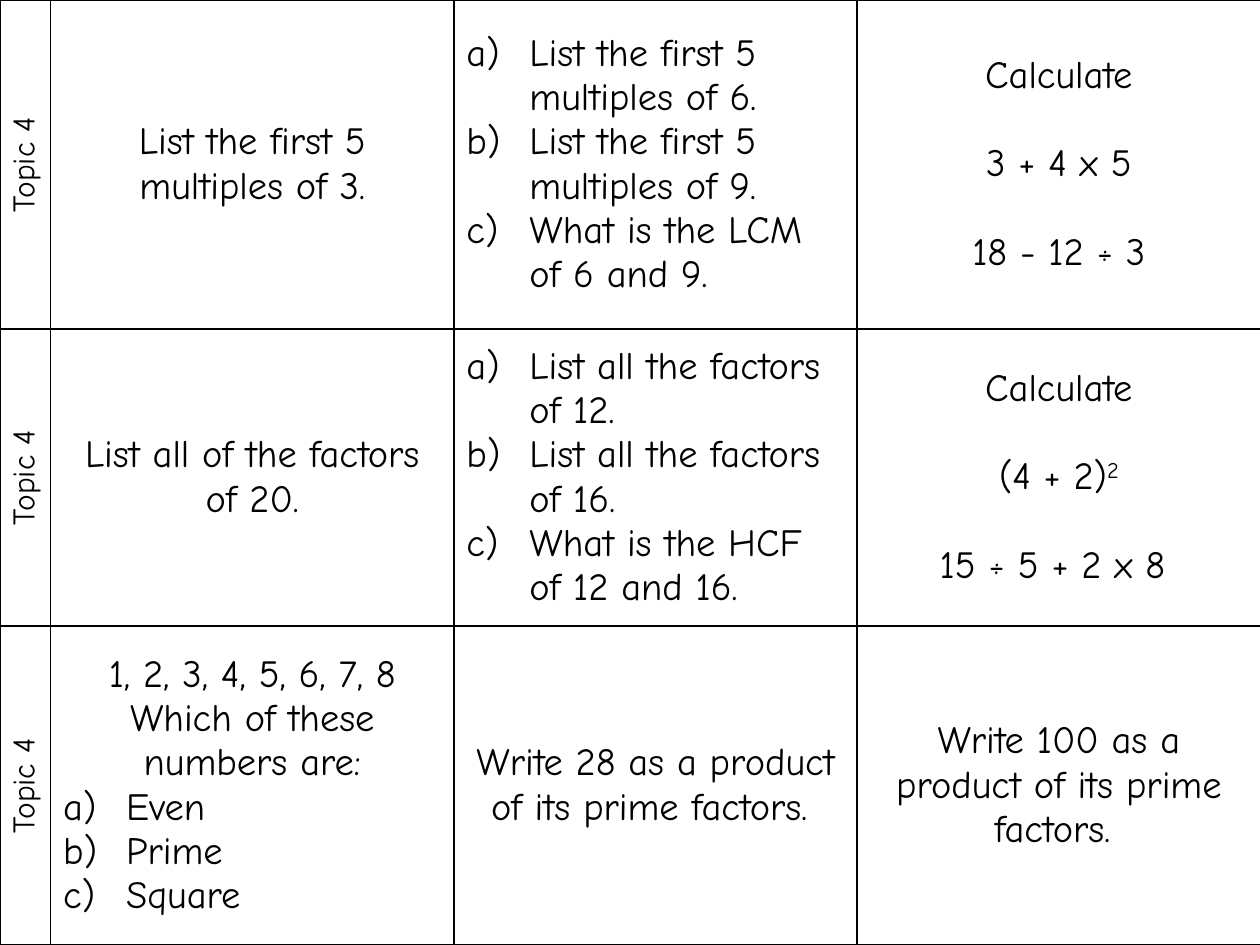
import lxml.etree
import pptx
import pptx.dml.color
import pptx.enum.text
import pptx.oxml.ns
import pptx.util

Cm = pptx.util.Cm
Pt = pptx.util.Pt
qn = pptx.oxml.ns.qn
ALIGN = pptx.enum.text.PP_ALIGN
ANCHOR = pptx.enum.text.MSO_ANCHOR

COLORS = {"ink": "000000", "paper": "FFFFFF"}
FONT = "Comic Neue"
LINE_GAP = 25.3
COLUMN_WIDTHS = [1.02, 8.13, 8.13, 8.13]
ROW_HEIGHTS = [6.63, 5.99, 6.43]

QUESTIONS = [
    [
        {"lines": ["List the first 5 multiples of 3."]},
        {"parts": ["List the first 5 multiples of 6.",
                   "List the first 5 multiples of 9.",
                   "What is the LCM of 6 and 9."]},
        {"lines": ["Calculate", "3 + 4 x 5", "18 - 12 ÷ 3"], "gap": LINE_GAP},
    ],
    [
        {"lines": ["List all of the factors of 20."]},
        {"parts": ["List all the factors of 12.",
                   "List all the factors of 16.",
                   "What is the HCF of 12 and 16."]},
        {"lines": ["Calculate", "(4 + 2)^2", "15 ÷ 5 + 2 x 8 "], "gap": LINE_GAP},
    ],
    [
        {"lines": ["1, 2, 3, 4, 5, 6, 7, 8", "Which of these numbers are:"],
         "parts": ["Even", "Prime", "Square"]},
        {"lines": ["Write 28 as a product of its prime factors. "]},
        {"lines": ["Write 100 as a product of its prime factors. "]},
    ],
]


def rgb(name):
    return pptx.dml.color.RGBColor.from_string(COLORS[name])


def add_run(p, text, size=22, superscript=False):
    r = p.add_run()
    r.text = text
    r.font.name = FONT
    r.font.size = Pt(size)
    r.font.bold = False
    r.font.color.rgb = rgb("ink")
    if superscript:
        r.font._element.set("baseline", "30000")


def number_paragraph(p):
    pPr = p._p.get_or_add_pPr()
    pPr.set("marL", str(Cm(1.27)))
    pPr.set("indent", str(-Cm(1.27)))
    lxml.etree.SubElement(pPr, qn("a:buFont"), typeface="+mj-lt")
    lxml.etree.SubElement(pPr, qn("a:buAutoNum"), type="alphaLcParenR")


def write_paragraph(p, text, size=22, numbered=False, gap=0):
    p.alignment = ALIGN.LEFT if numbered else ALIGN.CENTER
    if gap:
        p.space_before = Pt(gap)
    if numbered:
        number_paragraph(p)
    base, _, power = text.partition("^")
    add_run(p, base, size=size)
    if power:
        add_run(p, power, size=size, superscript=True)


def style_cell(cell):
    cell.fill.solid()
    cell.fill.fore_color.rgb = rgb("paper")
    tcPr = cell._tc.get_or_add_tcPr()
    for i, side in enumerate(("a:lnL", "a:lnR", "a:lnT", "a:lnB")):
        ln = lxml.etree.Element(qn(side), w=str(Pt(1)))
        fill = lxml.etree.SubElement(ln, qn("a:solidFill"))
        lxml.etree.SubElement(fill, qn("a:srgbClr"), val=COLORS["ink"])
        tcPr.insert(i, ln)


def write_topic(cell, text):
    style_cell(cell)
    cell._tc.get_or_add_tcPr().set("vert", "vert270")
    write_paragraph(cell.text_frame.paragraphs[0], text, size=18)


def write_question(cell, lines=(), parts=(), gap=0):
    style_cell(cell)
    cell.vertical_anchor = ANCHOR.MIDDLE
    tf = cell.text_frame
    items = [(text, False) for text in lines] + [(text, True) for text in parts]
    for i, (text, numbered) in enumerate(items):
        p = tf.add_paragraph() if i else tf.paragraphs[0]
        write_paragraph(p, text, numbered=numbered, gap=gap if i else 0)


def add_grid(s, width, height):
    frame = s.shapes.add_table(len(ROW_HEIGHTS), len(COLUMN_WIDTHS), 0, 0, width, height)
    table = frame.table
    table.first_row = False
    table.horz_banding = False
    for column, size in zip(table.columns, COLUMN_WIDTHS):
        column.width = Cm(size)
    for row, size in zip(table.rows, ROW_HEIGHTS):
        row.height = Cm(size)
    return table


def main():
    prs = pptx.Presentation()
    prs.slide_width, prs.slide_height = Cm(25.4), Cm(19.05)
    s = prs.slides.add_slide(prs.slide_layouts[6])
    table = add_grid(s, prs.slide_width, prs.slide_height)
    for row, questions in enumerate(QUESTIONS):
        write_topic(table.cell(row, 0), "Topic 4")
        for col, question in enumerate(questions, start=1):
            write_question(table.cell(row, col), **question)
    prs.save("out.pptx")


if __name__ == "__main__":
    main()
